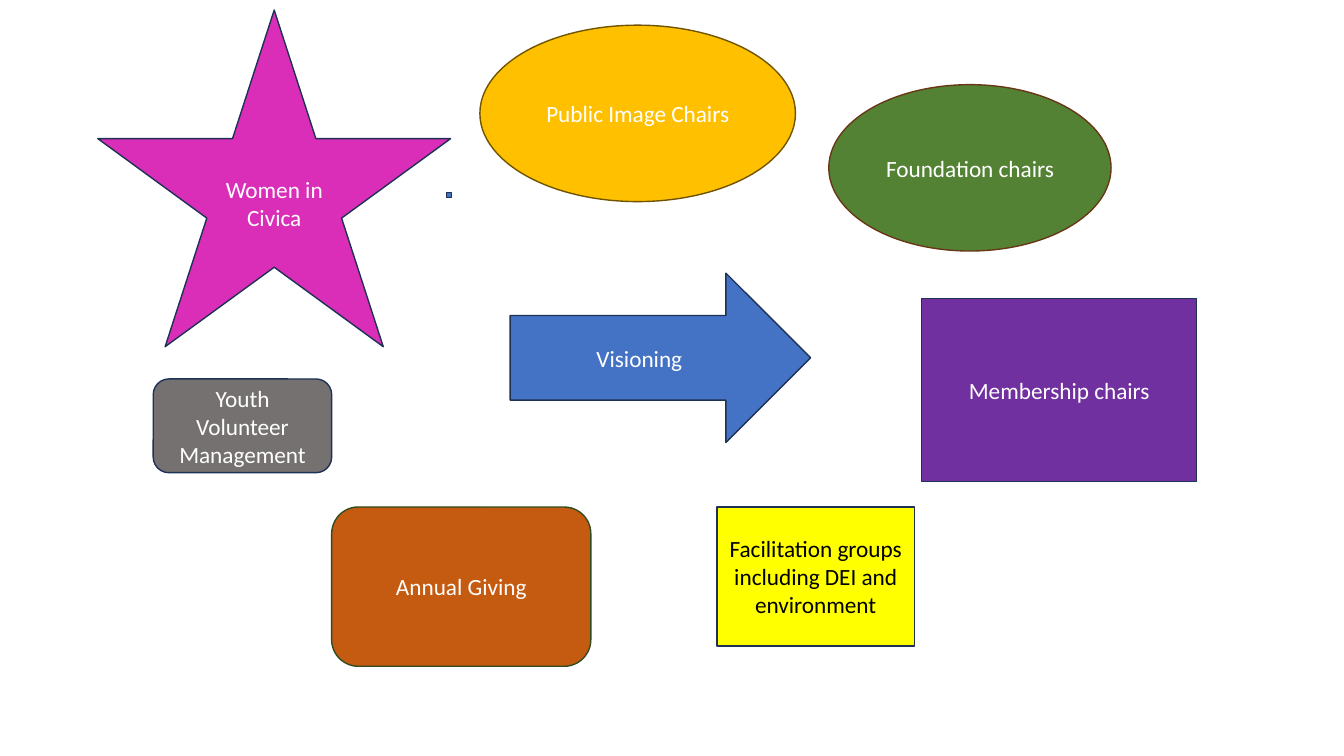
from pptx import Presentation
from pptx.dml.color import RGBColor
from pptx.enum.shapes import MSO_SHAPE as SHAPE
from pptx.enum.text import MSO_ANCHOR, PP_ALIGN
from pptx.util import Inches, Pt

WHITE = RGBColor(0xFF, 0xFF, 0xFF)
BLACK = RGBColor(0x00, 0x00, 0x00)
NAVY = RGBColor(0x1E, 0x32, 0x56)
BROWN = RGBColor(0x68, 0x37, 0x15)
DARK_GREEN = RGBColor(0x31, 0x4C, 0x1F)
OLIVE = RGBColor(0x70, 0x54, 0x00)
PURPLE = RGBColor(0x70, 0x30, 0xA0)
BLUE = RGBColor(0x44, 0x72, 0xC4)
GREEN = RGBColor(0x54, 0x82, 0x35)
ORANGE = RGBColor(0xC5, 0x5A, 0x11)
PINK = RGBColor(0xDA, 0x2E, 0xB9)
GOLD = RGBColor(0xFF, 0xC0, 0x00)
YELLOW = RGBColor(0xFF, 0xFF, 0x00)
GRAY = RGBColor(0x76, 0x71, 0x71)

# Groups, back to front: text, shape, (left, top, width, height), fill, outline, text colour
GROUPS = [
    ("Membership chairs", SHAPE.RECTANGLE, (9.14, 2.96, 2.73, 1.82), PURPLE, NAVY, WHITE),
    ("", SHAPE.RECTANGLE, (4.43, 1.91, 0.05, 0.05), BLUE, NAVY, WHITE),
    ("Foundation chairs", SHAPE.OVAL, (8.22, 0.84, 2.8, 1.65), GREEN, BROWN, WHITE),
    ("Annual Giving", SHAPE.ROUNDED_RECTANGLE, (3.29, 5.03, 2.57, 1.58), ORANGE, DARK_GREEN, WHITE),
    ("Women in Civica", SHAPE.STAR_5_POINT, (0.97, 0.1, 3.5, 3.34), PINK, NAVY, WHITE),
    ("Visioning", SHAPE.RIGHT_ARROW, (5.06, 2.71, 2.98, 1.68), BLUE, NAVY, WHITE),
    ("Public Image Chairs", SHAPE.OVAL, (4.76, 0.25, 3.13, 1.75), GOLD, OLIVE, WHITE),
    ("Facilitation groups including DEI and environment", SHAPE.RECTANGLE,
     (7.11, 5.03, 1.96, 1.38), YELLOW, NAVY, BLACK),
    ("Youth Volunteer Management", SHAPE.ROUNDED_RECTANGLE,
     (1.52, 3.76, 1.77, 0.93), GRAY, NAVY, WHITE),
]

prs = Presentation()
prs.slide_width, prs.slide_height = Inches(13.33), Inches(7.5)
s = prs.slides.add_slide(prs.slide_layouts[6])

# Draw each group with its centred label
for text, kind, box, fill, outline, color in GROUPS:
    sp = s.shapes.add_shape(kind, *map(Inches, box))
    sp.shadow.inherit = False
    sp.fill.solid()
    sp.fill.fore_color.rgb = fill
    sp.line.color.rgb = outline
    sp.line.width = Pt(1)
    if text:
        tf = sp.text_frame
        tf.word_wrap = True
        tf.vertical_anchor = MSO_ANCHOR.MIDDLE
        p = tf.paragraphs[0]
        p.text = text
        p.alignment = PP_ALIGN.CENTER
        p.space_after = Pt(6)
        p.font.name = "Calibri"
        p.font.size = Pt(16.6)
        p.font.color.rgb = color

prs.save("out.pptx")
